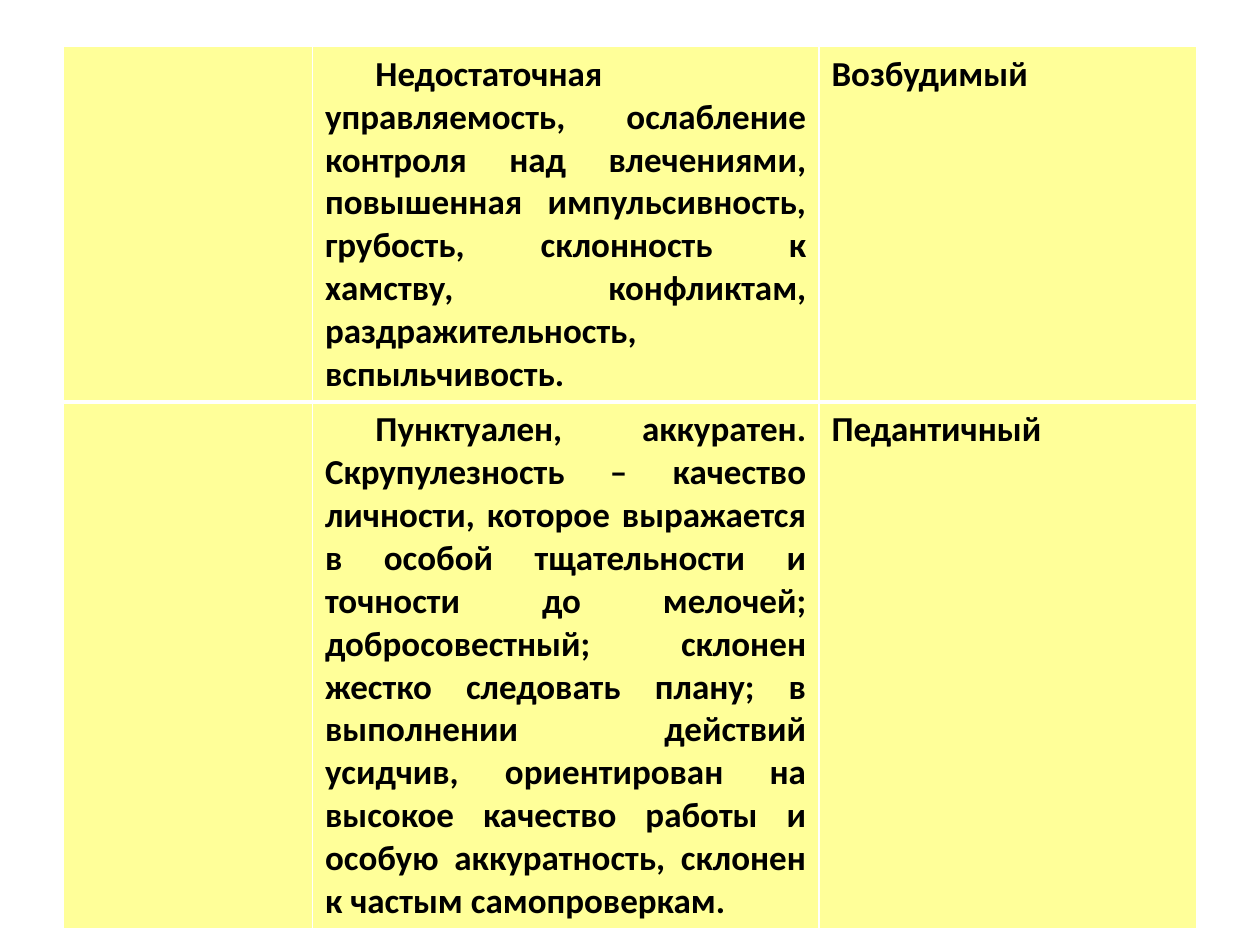
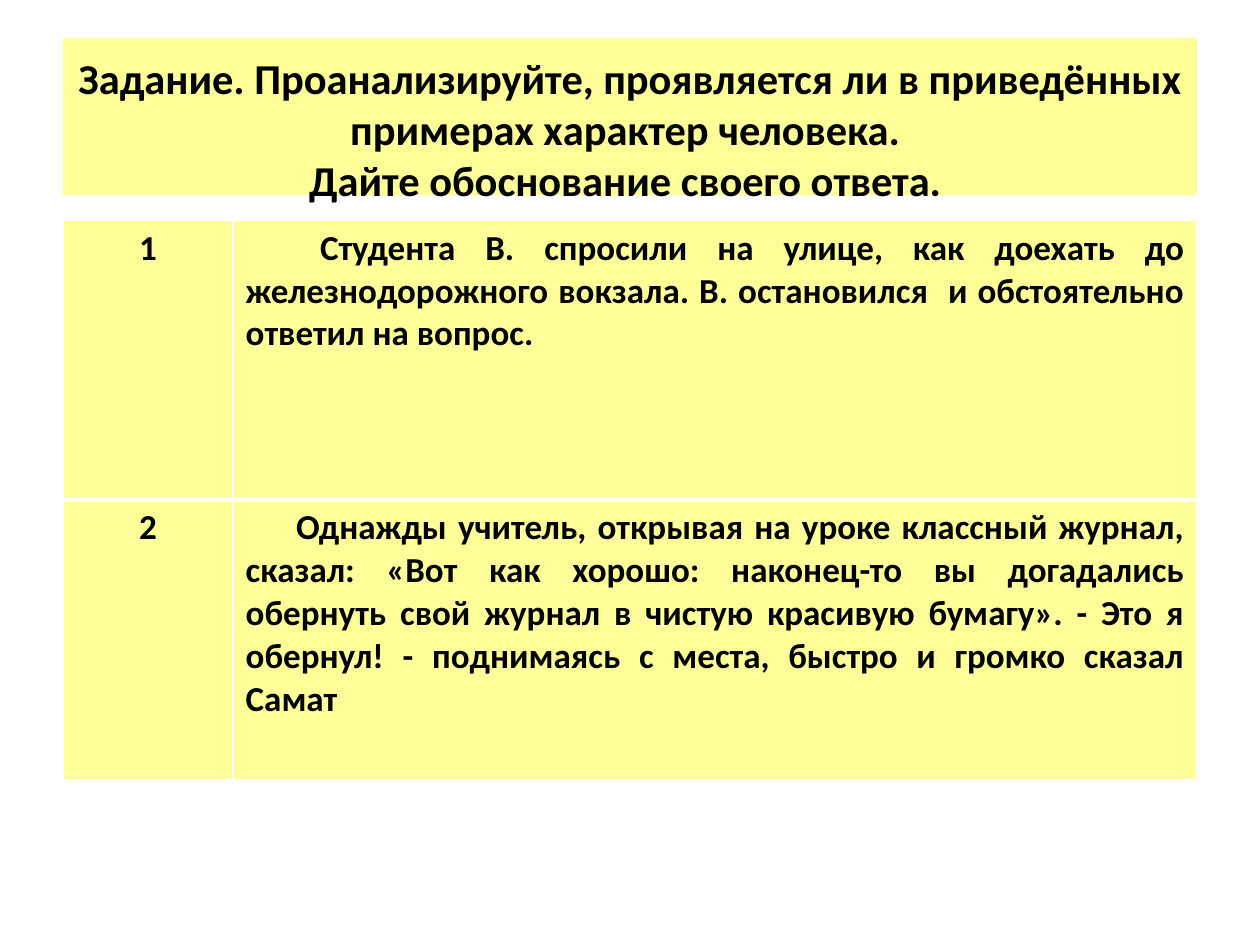
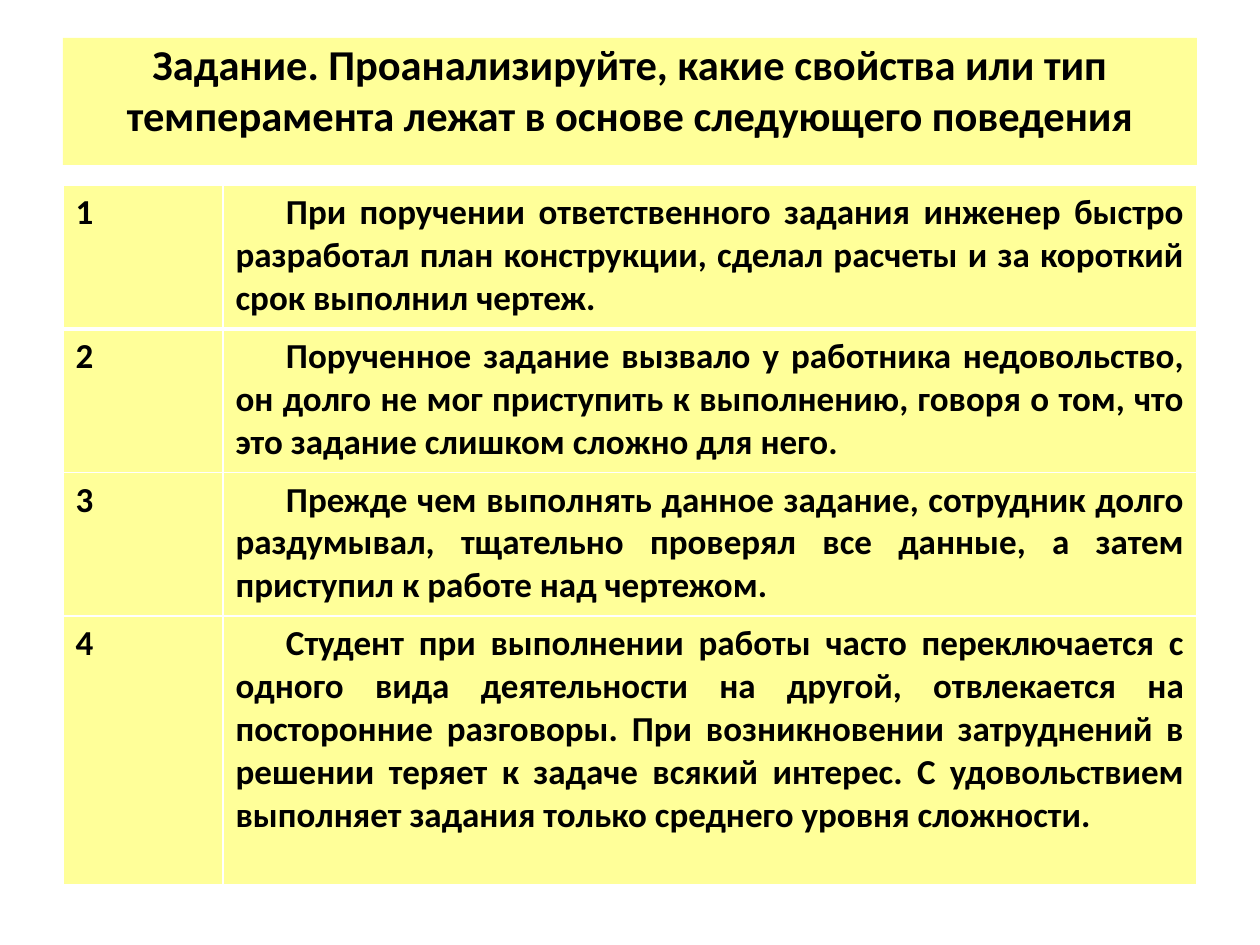
from dataclasses import dataclass

from lxml import etree
from pptx import Presentation, util as u
from pptx.dml.color import RGBColor
from pptx.enum import shapes, text
from pptx.oxml import ns


@dataclass(frozen=True)
class Theme:
    """Colours, type sizes and measures shared by the slides."""
    font: str = "Calibri"
    panel: str = "FFFF99"
    ink: str = "000000"
    rule: str = "FFFFFF"
    title_size: float = 24.3
    body_size: float = 20
    thin: float = 1
    thick: float = 3
    left: float = 0.5
    width: float = 9
    title_top: float = 0.3
    indent: float = 0.4


THEME = Theme()
LEFT, CENTER, JUSTIFY = text.PP_ALIGN.LEFT, text.PP_ALIGN.CENTER, text.PP_ALIGN.JUSTIFY


@dataclass(frozen=True)
class Entry:
    """Wording and paragraph setting of one cell."""
    wording: str
    indent: float = 0
    align: text.PP_ALIGN = JUSTIFY


def add_run(paragraph, wording, size):
    """Add one bold run in the theme font."""
    run = paragraph.add_run()
    run.text = wording
    run.font.name = THEME.font
    run.font.size = u.Pt(size)
    run.font.bold = True
    run.font.color.rgb = RGBColor.from_string(THEME.ink)


def paint(fill):
    """Fill with the panel colour."""
    fill.solid()
    fill.fore_color.rgb = RGBColor.from_string(THEME.panel)


def add_title(slide, lines, height, inset=0):
    """Add the title panel with its lines centred."""
    shape = slide.shapes.add_shape(
        shapes.MSO_SHAPE.RECTANGLE, u.Inches(THEME.left), u.Inches(THEME.title_top),
        u.Inches(THEME.width), u.Inches(height))
    shape.shadow.inherit = False
    paint(shape.fill)
    shape.line.fill.background()
    frame = shape.text_frame
    frame.word_wrap = True
    frame.vertical_anchor = text.MSO_ANCHOR.TOP
    frame.margin_left = frame.margin_right = frame.margin_bottom = 0
    frame.margin_top = u.Inches(inset)
    paragraph = frame.paragraphs[0]
    paragraph.alignment = CENTER
    for index, line in enumerate(lines):
        if index:
            paragraph.add_line_break()
        add_run(paragraph, line, THEME.title_size)


def add_borders(cell, widths):
    """Rule the left, right, top and bottom sides of a cell."""
    properties = cell._tc.get_or_add_tcPr()
    for side, width in zip(("lnL", "lnR", "lnT", "lnB"), widths):
        line = etree.SubElement(properties, ns.qn(f"a:{side}"), w=str(u.Pt(width)))
        fill = etree.SubElement(line, ns.qn("a:solidFill"))
        etree.SubElement(fill, ns.qn("a:srgbClr"), val=THEME.rule)


def fill_cell(cell, entry, row):
    """Style a cell and write its entry, if any."""
    thin, thick = THEME.thin, THEME.thick
    add_borders(cell, (thin, thin, thick if row == 1 else thin, thick if row == 0 else thin))
    paint(cell.fill)
    if entry is None:
        return
    paragraph = cell.text_frame.paragraphs[0]
    paragraph.alignment = entry.align
    if entry.indent:
        properties = paragraph._p.get_or_add_pPr()
        properties.set("marL", "0")
        properties.set("indent", str(u.Inches(entry.indent)))
    add_run(paragraph, entry.wording, THEME.body_size)


def add_grid(slide, top, columns, heights, rows):
    """Add a table with a thick rule under its first row."""
    table = slide.shapes.add_table(
        len(rows), len(columns), u.Inches(THEME.left), u.Inches(top),
        u.Inches(THEME.width), u.Inches(sum(heights))).table
    table.first_row = table.horz_banding = False
    for column, width in zip(table.columns, columns):
        column.width = u.Inches(width)
    for row_index, (row, height) in enumerate(zip(rows, heights)):
        table.rows[row_index].height = u.Inches(height)
        for column_index, entry in enumerate(row):
            fill_cell(table.cell(row_index, column_index), entry, row_index)


def numbered(entries, align):
    """Put a running number before each entry."""
    return [(Entry(str(number), align=align), entry)
            for number, entry in enumerate(entries, start=1)]


def build_types(slide):
    """Build the table of character types."""
    types = [
        ("Недостаточная управляемость, ослабление контроля над влечениями, "
         "повышенная импульсивность, грубость, склонность к хамству, конфликтам, "
         "раздражительность, вспыльчивость.", "Возбудимый"),
        ("Пунктуален, аккуратен. Скрупулезность – качество личности, которое "
         "выражается в особой тщательности и точности до мелочей; добросовестный; "
         "склонен жестко следовать плану; в выполнении действий усидчив, ориентирован "
         "на высокое качество работы и особую аккуратность, склонен к частым "
         "самопроверкам.", "Педантичный"),
    ]
    rows = [(None, Entry(traits, THEME.indent), Entry(name)) for traits, name in types]
    add_grid(slide, 0.37, (1.98, 4.02, 3), (2.82, 4.17), rows)


def build_character_task(slide):
    """Build the task about character."""
    add_title(slide, ("Задание. Проанализируйте, проявляется ли в приведённых примерах "
                      "характер человека. ", "Дайте обоснование своего ответа. "), 1.25, 0.11)
    cases = [
        Entry("Студента В. спросили на улице, как доехать до железнодорожного вокзала. "
              "В. остановился  и обстоятельно ответил на вопрос.", 0.59),
        Entry("Однажды учитель, открывая на уроке классный журнал, сказал: «Вот как "
              "хорошо: наконец-то вы догадались обернуть свой журнал в чистую красивую "
              "бумагу». - Это я обернул! - поднимаясь с места, быстро и громко сказал "
              "Самат", THEME.indent),
    ]
    add_grid(slide, 1.75, (1.35, 7.65), [2.22] * 2, numbered(cases, CENTER))


def build_temperament_task(slide):
    """Build the task about temperament."""
    add_title(slide, ("Задание. Проанализируйте, какие свойства или тип темперамента "
                      "лежат в основе следующего поведения",), 1.01)
    cases = (
        "При поручении ответственного задания инженер быстро разработал план "
        "конструкции, сделал расчеты и за короткий срок выполнил чертеж.",
        "Порученное задание вызвало у работника недовольство, он долго не мог "
        "приступить к выполнению, говоря о том, что это задание слишком сложно для него.",
        "Прежде чем выполнять данное задание, сотрудник долго раздумывал, тщательно "
        "проверял все данные, а затем приступил к работе над чертежом.",
        "Студент при выполнении работы часто переключается с одного вида деятельности "
        "на другой, отвлекается на посторонние разговоры. При возникновении затруднений "
        "в решении теряет к задаче всякий интерес. С удовольствием выполняет задания "
        "только среднего уровня сложности.",
    )
    entries = [Entry(case, THEME.indent) for case in cases]
    add_grid(slide, 1.47, (1.27, 7.73), [1.14] * 3 + [2.13], numbered(entries, JUSTIFY))


def main():
    """Build the presentation and save it."""
    presentation = Presentation()
    presentation.slide_width = u.Inches(10)
    presentation.slide_height = u.Inches(7.5)
    for build in (build_types, build_character_task, build_temperament_task):
        build(presentation.slides.add_slide(presentation.slide_layouts[6]))
    presentation.save("out.pptx")


if __name__ == "__main__":
    main()
